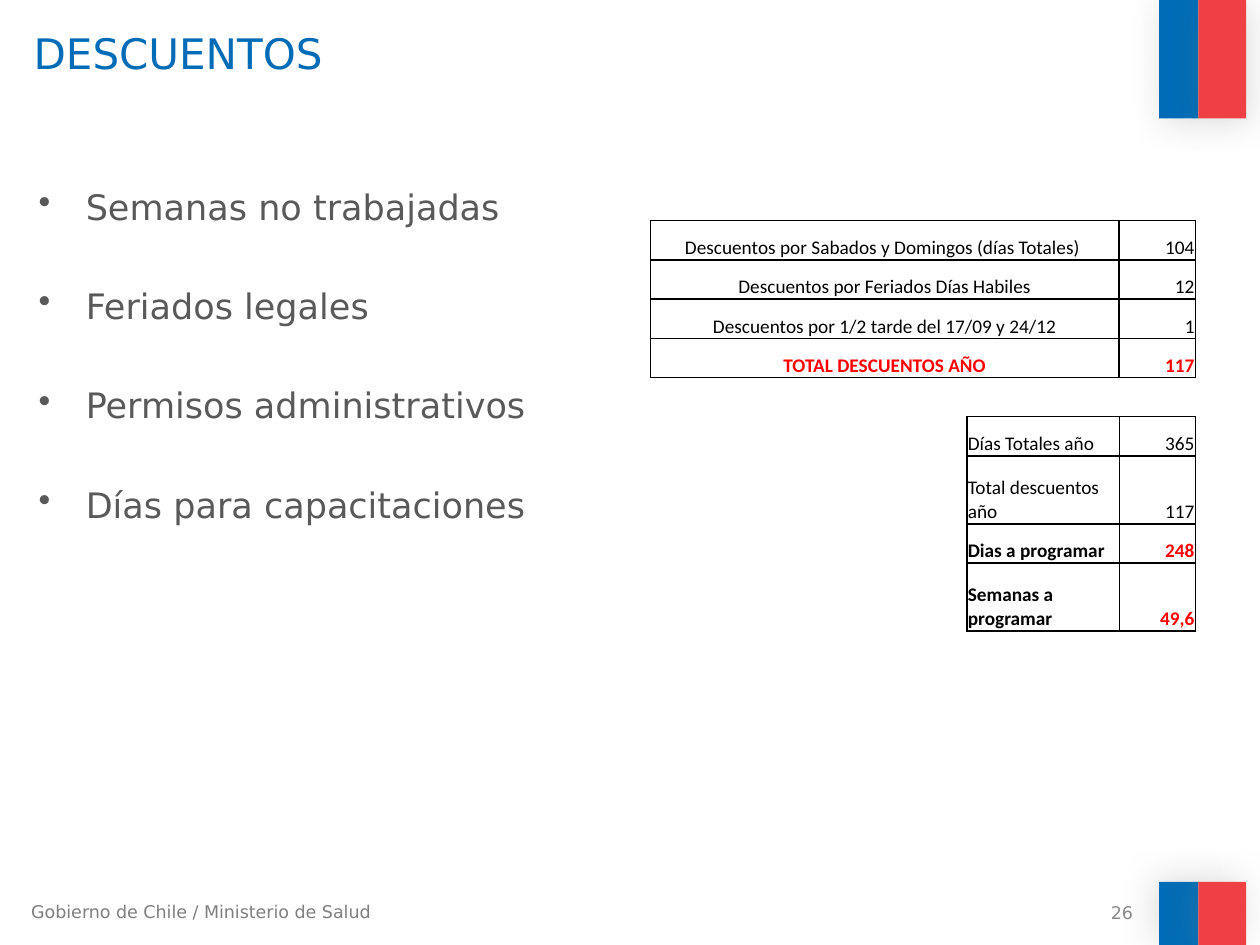
import pptx
import pptx.util
import pptx.dml.color
import pptx.enum.shapes
import pptx.enum.text
import pptx.oxml
import lxml.etree

Cm = pptx.util.Cm
Pt = pptx.util.Pt
RGB = pptx.dml.color.RGBColor
ALIGN = pptx.enum.text.PP_ALIGN
ANCHOR = pptx.enum.text.MSO_ANCHOR
NS = "http://schemas.openxmlformats.org/drawingml/2006/main"

BLUE = RGB(0x00, 0x6C, 0xB7)
CORAL = RGB(0xEF, 0x41, 0x44)
RED = RGB(0xFF, 0x00, 0x00)
BLACK = RGB(0x00, 0x00, 0x00)
WHITE = RGB(0xFF, 0xFF, 0xFF)
SHADE = RGB(0x80, 0x80, 0x80)
DARK = RGB(0x59, 0x59, 0x59)
GRAY = RGB(0x7F, 0x7F, 0x7F)
PALE = RGB(0x89, 0x89, 0x89)

SANS = "DejaVu Sans"
COLS = (3.89, 2.49, 3.07, 1.54)
LOW, TALL = 0.79, 1.37
UPPER = (
    ("Descuentos por Sabados y Domingos (días Totales) ", "104"),
    ("Descuentos por Feriados Días Habiles", "12"),
    ("Descuentos por 1/2 tarde del 17/09 y 24/12", "1"),
    ("TOTAL DESCUENTOS AÑO", "117"),
)
LOWER = (
    ("Días Totales año", "365", LOW, False),
    ("Total descuentos año", "117", TALL, False),
    ("Dias a programar", "248", LOW, True),
    ("Semanas a programar", "49,6", TALL, True),
)
ITEMS = (
    "Semanas no trabajadas",
    "Feriados legales",
    "Permisos administrativos",
    "Días para capacitaciones",
)


def style(para, face, size, color, bold=False):
    para.font.name = face
    para.font.size = Pt(size)
    para.font.bold = bold
    para.font.color.rgb = color


def shadow(shape, angle):
    shape.shadow.inherit = False
    effects = shape._element.spPr.find(f"{{{NS}}}effectLst")
    effects.append(pptx.oxml.parse_xml(
        f'<a:outerShdw xmlns:a="{NS}" blurRad="{Pt(20)}" dist="{Pt(3)}" '
        f'dir="{angle * 60000}" rotWithShape="0"><a:srgbClr val="{SHADE}">'
        '<a:alpha val="25000"/></a:srgbClr></a:outerShdw>'))


def add_flag(slide, left, top, width, height, angle):
    split = width * 0.45
    for color, start, size in ((BLUE, 0, split), (CORAL, split, width - split)):
        band = slide.shapes.add_shape(
            pptx.enum.shapes.MSO_SHAPE.RECTANGLE,
            Cm(left + start), Cm(top), Cm(size), Cm(height))
        band.fill.solid()
        band.fill.fore_color.rgb = color
        band.line.fill.background()
        shadow(band, angle)


def add_text(slide, left, top, width, height, lines, size, color,
             align=ALIGN.LEFT, anchor=ANCHOR.TOP):
    box = slide.shapes.add_textbox(Cm(left), Cm(top), Cm(width), Cm(height))
    frame = box.text_frame
    frame.word_wrap = True
    frame.vertical_anchor = anchor
    frame.text = "\n".join(lines)
    for para in frame.paragraphs:
        para.alignment = align
        style(para, SANS, size, color)
    return frame


def add_list(slide, left, top, width, height):
    frame = add_text(slide, left, top, width, height, ITEMS, 20, DARK)
    for row, para in enumerate(frame.paragraphs):
        para.space_before = Pt(32.7 if row else 0)
        props = para._p.get_or_add_pPr()
        props.set("marL", str(Cm(0.95)))
        props.set("indent", str(-Cm(0.95)))
        bullet = lxml.etree.SubElement(props, f"{{{NS}}}buChar")
        bullet.set("char", "•")


def edge(cell, sides, thin=""):
    props = cell._tc.get_or_add_tcPr()
    for side in "LRTB":
        width = Pt(0.5 if side in thin else 1)
        ink = (f'<a:solidFill><a:srgbClr val="{BLACK}"/></a:solidFill>'
               if side in sides else "<a:noFill/>")
        props.append(pptx.oxml.parse_xml(
            f'<a:ln{side} xmlns:a="{NS}" w="{width}">{ink}</a:ln{side}>'))


def put(cell, text, align, color=BLACK, bold=False):
    cell.text = text
    para = cell.text_frame.paragraphs[0]
    para.alignment = align
    style(para, "Calibri", 11, color, bold)


def add_grid(slide, left, top, width, height):
    rows = [LOW] * (len(UPPER) + 1) + [line[2] for line in LOWER]
    gap = len(UPPER)
    table = slide.shapes.add_table(
        len(rows), len(COLS), Cm(left), Cm(top), Cm(width), Cm(height)).table
    table.first_row = False
    table.horz_banding = False
    for col, size in zip(table.columns, COLS):
        col.width = Cm(size)
    for y, size in enumerate(rows):
        table.rows[y].height = Cm(size)
        for x in range(len(COLS)):
            cell = table.cell(y, x)
            cell.margin_left = cell.margin_right = cell.margin_top = Cm(0.02)
            cell.margin_bottom = 0
            cell.vertical_anchor = ANCHOR.BOTTOM
            blank = y >= gap and x < 2
            if y < gap:
                edge(cell, "LRTB")
            elif y == gap:
                edge(cell, "T" if blank else "TB")
            elif blank:
                edge(cell, "R" if x else "")
            else:
                edge(cell, "LRTB", "R" if x == 2 else "L")
            if blank:
                cell.fill.solid()
                cell.fill.fore_color.rgb = WHITE
            else:
                cell.fill.background()
            if y == gap or blank:
                put(cell, "", ALIGN.LEFT)
    for y, (label, value) in enumerate(UPPER):
        total = y == gap - 1
        color = RED if total else BLACK
        table.cell(y, 0).merge(table.cell(y, 2))
        put(table.cell(y, 0), label, ALIGN.CENTER, color, total)
        put(table.cell(y, 3), value, ALIGN.RIGHT, color, total)
    for y, (label, value, size, bold) in enumerate(LOWER, gap + 1):
        put(table.cell(y, 2), label, ALIGN.LEFT, BLACK, bold)
        put(table.cell(y, 3), value, ALIGN.RIGHT, RED if bold else BLACK, bold)


def main():
    deck = pptx.Presentation()
    deck.slide_width = Cm(25.4)
    deck.slide_height = Cm(19.05)
    slide = deck.slides.add_slide(deck.slide_layouts[6])
    add_flag(slide, 23.37, 0, 1.75, 2.39, 45)
    add_flag(slide, 23.37, 17.78, 1.75, 1.27, 215)
    add_text(slide, 0.38, 18.03, 7.67, 0.69,
             ["Gobierno de Chile / Ministerio de Salud"], 10, GRAY)
    add_text(slide, 0.43, 0.43, 22.68, 3.18, ["DESCUENTOS"], 24, BLUE)
    add_grid(slide, 13.11, 4.45, 11, 8.28)
    add_list(slide, 0.53, 3.61, 11.23, 12.57)
    add_text(slide, 17.17, 18.14, 5.92, 0.53, ["26"], 10, PALE,
             ALIGN.RIGHT, ANCHOR.MIDDLE)
    deck.save("out.pptx")


if __name__ == "__main__":
    main()
